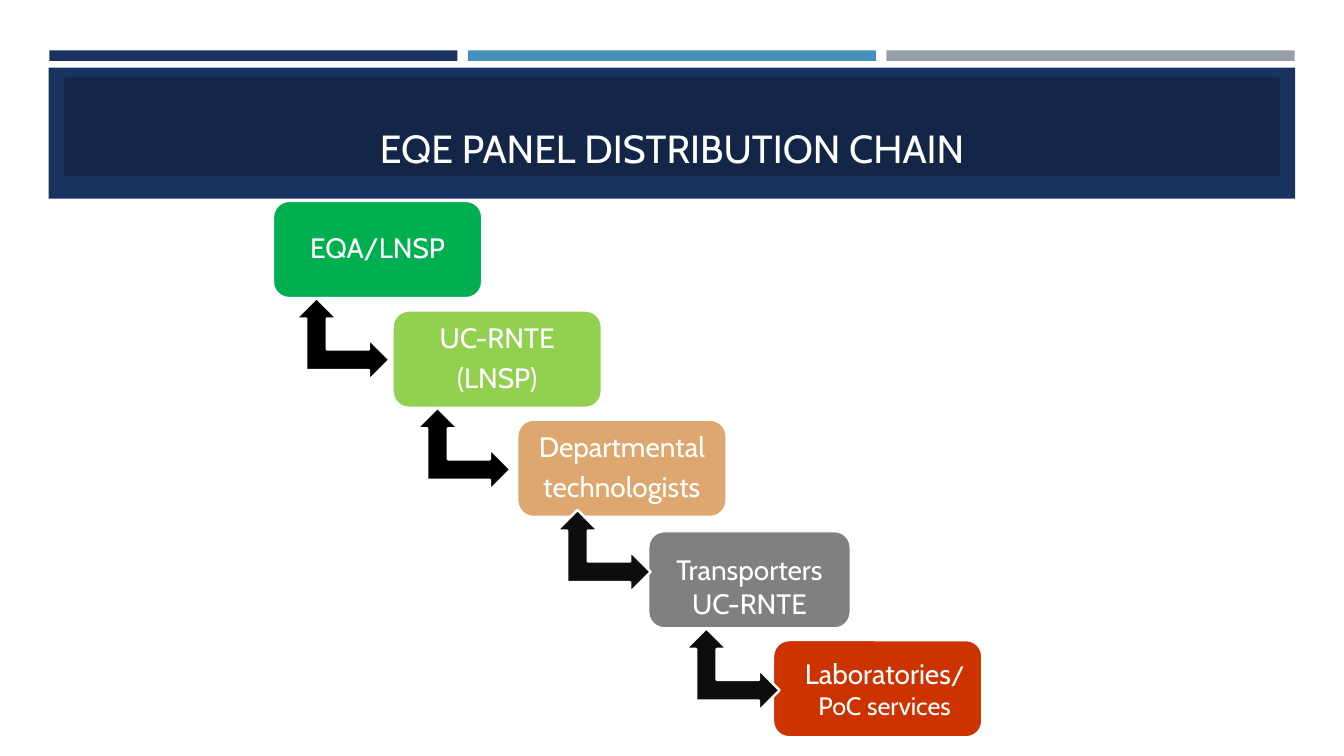
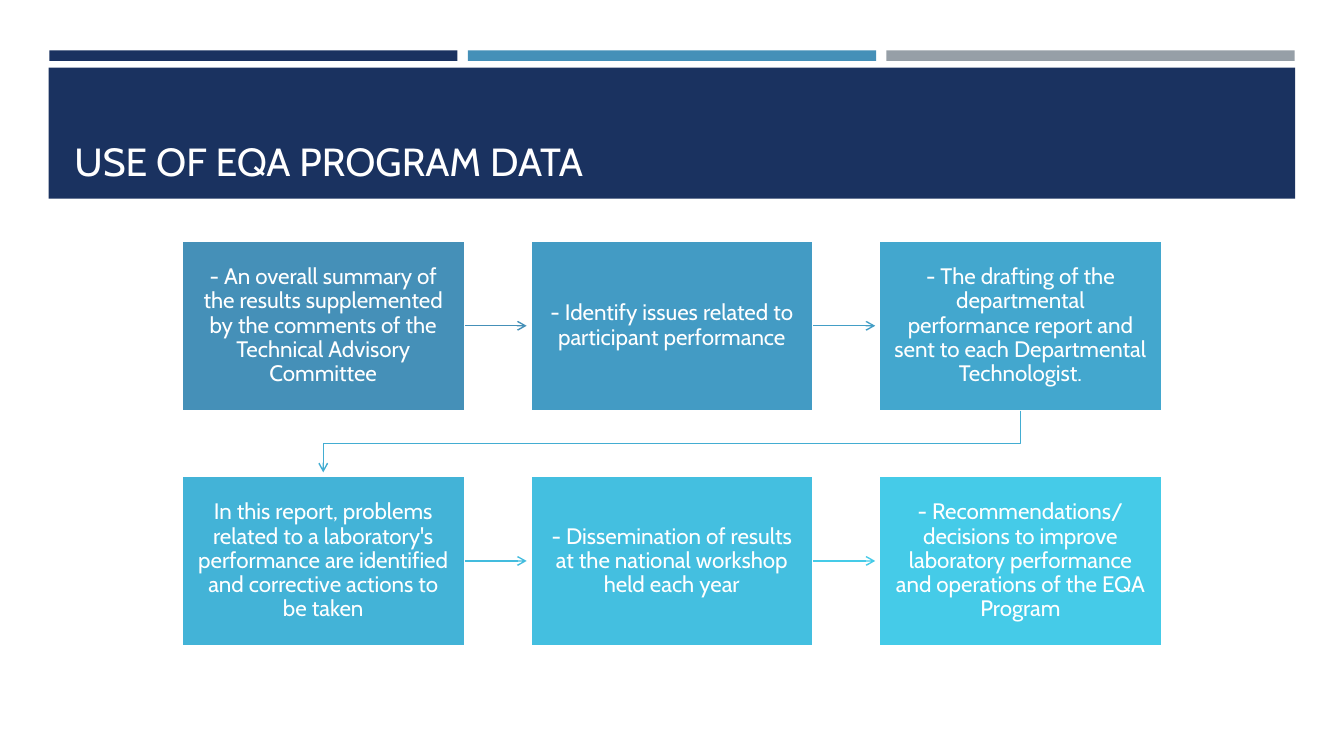
from lxml import etree
from pptx import Presentation
from pptx.dml.color import RGBColor
from pptx.enum import shapes, text
from pptx.oxml.ns import qn
from pptx.util import Pt

FONT = "Cabin"
WHITE = RGBColor(0xFF, 0xFF, 0xFF)
BLACK = RGBColor(0x00, 0x00, 0x00)
SOFT_BLACK = RGBColor(0x0D, 0x0D, 0x0D)
NAVY = RGBColor(0x1A, 0x32, 0x60)
DARK_NAVY = RGBColor(0x14, 0x26, 0x48)
BLUE = RGBColor(0x45, 0x90, 0xB8)
GREY = RGBColor(0x96, 0x9F, 0xA7)
GREEN = RGBColor(0x00, 0xB0, 0x50)
LIME = RGBColor(0x92, 0xD0, 0x50)
TAN = RGBColor(0xDE, 0xA7, 0x70)
MID_GREY = RGBColor(0x80, 0x80, 0x80)
RED = RGBColor(0xCC, 0x33, 0x00)
STEP_FILLS = [BLUE, RGBColor(0x43, 0x9B, 0xC4), RGBColor(0x43, 0xA7, 0xCE),
              RGBColor(0x43, 0xB3, 0xD7), RGBColor(0x44, 0xBF, 0xE0),
              RGBColor(0x45, 0xCB, 0xE8)]
ARROW_COLORS = [BLUE, RGBColor(0x43, 0x9E, 0xC6), RGBColor(0x43, 0xAD, 0xD2),
                RGBColor(0x43, 0xBC, 0xDE), RGBColor(0x45, 0xCB, 0xE8)]
RECTANGLE = shapes.MSO_SHAPE.RECTANGLE


def add_filled(page, kind, left, top, width, height, fill, outlined=True):
    shape = page.shapes.add_shape(kind, Pt(left), Pt(top), Pt(width), Pt(height))
    shape.shadow.inherit = False
    shape.fill.solid()
    shape.fill.fore_color.rgb = fill
    if outlined:
        shape.line.color.rgb = WHITE
        shape.line.width = Pt(1.75)
    else:
        shape.line.fill.background()
    return shape


def write(shape, lines, size, align=text.PP_ALIGN.CENTER, spacing=1.0, after=0,
          anchor=text.MSO_ANCHOR.MIDDLE):
    frame = shape.text_frame
    frame.word_wrap = True
    frame.auto_size = text.MSO_AUTO_SIZE.NONE
    frame.vertical_anchor = anchor
    frame.text = "\n".join(lines)
    for para in frame.paragraphs:
        para.alignment = align
        para.line_spacing = spacing
        para.space_after = Pt(after)
        para.font.name = FONT
        para.font.size = Pt(size)
        para.font.color.rgb = WHITE
    return frame


deck = Presentation()
deck.slide_width, deck.slide_height = Pt(960), Pt(540)
layout = deck.slide_layouts[5]
chain_page = deck.slides.add_slide(layout)
use_page = deck.slides.add_slide(layout)

# Header bands belong to the shared layout, behind every title
bands = [add_filled(chain_page, RECTANGLE, 35.2 + 299 * i, 36, 291.6, 7.5, color, False)
         for i, color in enumerate([NAVY, BLUE, GREY])]
bands.append(add_filled(chain_page, RECTANGLE, 34.8, 48.4, 890.4, 93.6, NAVY, False))
for band in bands:
    layout.shapes._spTree.append(band._element)

for page, heading, height, align in [
        (chain_page, "EQE PANEL DISTRIBUTION CHAIN", 70.5, text.PP_ALIGN.CENTER),
        (use_page, "USE OF EQA PROGRAM DATA", 80, text.PP_ALIGN.LEFT)]:
    title = page.shapes.title
    title.left, title.top, title.width, title.height = Pt(46), Pt(55.2), Pt(868), Pt(height)
    write(title, [heading], 28, align, anchor=text.MSO_ANCHOR.BOTTOM)
chain_page.shapes.title.fill.solid()
chain_page.shapes.title.fill.fore_color.rgb = DARK_NAVY

# Distribution chain: lines, left, top, width, fill, line spacing, space after
stages = [
    (["EQA/LNSP"], 195, 143.5, 149.5, GREEN, 0.9, 7),
    (["UC-RNTE", "(LNSP)"], 280.4, 221.8, 149.5, LIME, 0.9, 7),
    (["Departmental", "technologists"], 369.5, 299.8, 149.5, TAN, 0.9, 7),
    (["Transporters", "UC-RNTE"], 463, 379.4, 144.7, MID_GREY, 1.0, 0),
    (["Laboratories", "PoC services"], 552.2, 457.2, 149.5, RED, 1.0, 0),
]
labels = []
for lines, left, top, width, fill, spacing, after in stages:
    box = add_filled(chain_page, shapes.MSO_SHAPE.ROUNDED_RECTANGLE, left, top, width, 69.5, fill)
    label = write(box, lines, 20, spacing=spacing, after=after)
    label.margin_left = label.margin_right = label.margin_top = label.margin_bottom = Pt(6)
    labels.append(label)
labels[3].margin_top = Pt(15)
labels[4].margin_left = Pt(16)
slash = labels[4].paragraphs[0].add_run()
slash.text = "/"
slash.font.size = labels[4].paragraphs[1].font.size = Pt(18)

for left, top, fill in [(215.3, 208.8, BLACK), (301.7, 287.2, BLACK),
                        (401.8, 360.2, SOFT_BLACK), (493.8, 444.8, SOFT_BLACK)]:
    turn = add_filled(chain_page, shapes.MSO_SHAPE.LEFT_UP_ARROW, left, top, 59, 67, fill)
    turn.rotation = 90

# Use of data: a grid of three columns and two rows
steps = [
    "- An overall summary of the results supplemented by the comments of the "
    "Technical Advisory Committee",
    "- Identify issues related to participant performance",
    "- The drafting of the departmental performance report and sent to each "
    "Departmental Technologist.",
    "In this report, problems related to a laboratory's performance are identified "
    "and corrective actions to be taken",
    "- Dissemination of results at the national workshop held each year",
    "- Recommendations/ decisions to improve laboratory performance and operations "
    "of the EQA Program",
]
GRID_LEFT, GRID_TOP, STEP_WIDTH, STEP_HEIGHT = 129.8, 172, 202.2, 121.4
COLUMN_PITCH, ROW_PITCH, TIP_GAP = 249, 168, 2.6
boxes = []
for i, (step, fill) in enumerate(zip(steps, STEP_FILLS)):
    row, column = divmod(i, 3)
    box = add_filled(use_page, RECTANGLE, GRID_LEFT + column * COLUMN_PITCH,
                     GRID_TOP + row * ROW_PITCH, STEP_WIDTH, STEP_HEIGHT, fill)
    label = write(box, [step], 16, spacing=0.9)
    label.margin_left = label.margin_right = label.margin_top = label.margin_bottom = Pt(10)
    boxes.append(box)

arrows = []
for start, end in zip(boxes, boxes[1:]):
    if start.top == end.top:
        middle = start.top + start.height // 2
        arrow = use_page.shapes.add_connector(
            shapes.MSO_CONNECTOR.STRAIGHT, start.left + start.width, middle,
            end.left - Pt(TIP_GAP), middle)
        arrow.begin_connect(start, 3)
    else:
        start_x = start.left + start.width // 2
        end_x = end.left + end.width // 2
        bottom = start.top + start.height
        bend = (bottom + end.top) // 2
        path = use_page.shapes.build_freeform(start_x, bottom)
        path.add_line_segments([(start_x, bend), (end_x, bend),
                                (end_x, end.top - Pt(TIP_GAP))], close=False)
        arrow = path.convert_to_shape()
        arrow.fill.background()
    arrows.append(arrow)

for arrow, color in zip(arrows, ARROW_COLORS):
    arrow.line.color.rgb = color
    arrow.line.width = Pt(1)
    properties = arrow._element.spPr
    etree.SubElement(properties.find(qn("a:ln")), qn("a:tailEnd"), type="arrow")
    etree.SubElement(properties, qn("a:effectLst"))

deck.save("out.pptx")
